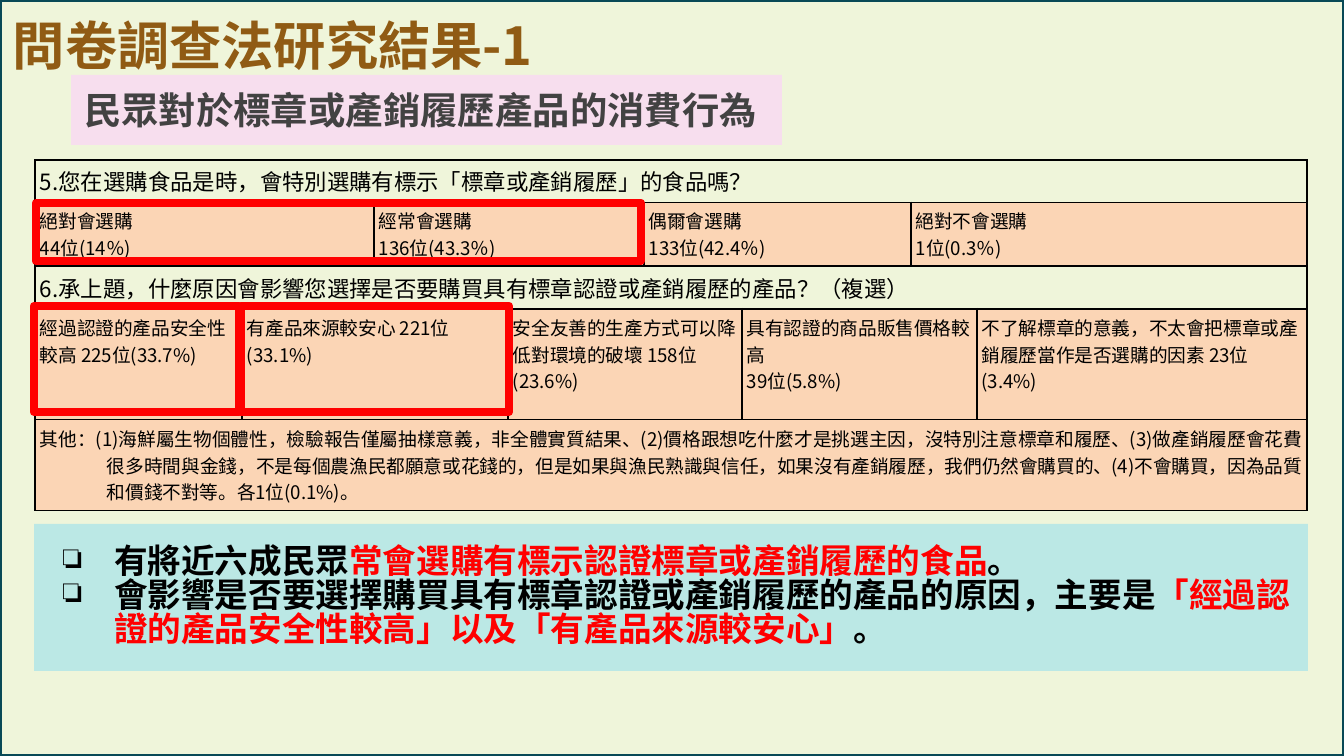
from lxml import etree
from pptx import Presentation
from pptx.dml.color import RGBColor
from pptx.enum.shapes import MSO_SHAPE
from pptx.enum.text import MSO_ANCHOR, MSO_AUTO_SIZE, PP_ALIGN
from pptx.oxml.ns import qn
from pptx.util import Pt

RECTANGLE = MSO_SHAPE.RECTANGLE
TOP, MIDDLE = MSO_ANCHOR.TOP, MSO_ANCHOR.MIDDLE
LEFT, JUSTIFY = PP_ALIGN.LEFT, PP_ALIGN.JUSTIFY
NO_AUTOFIT = MSO_AUTO_SIZE.NONE

EMU_PER_PX = 914400 / 134.4
SLIDE_W, SLIDE_H = 1344, 756
HEADING_FONT = "Noto Sans CJK SC"
TABLE_FONT = "Noto Sans CJK TC"
BLACK, RED, PEACH = "000000", "FF0000", "FBD5B5"

COLUMN_WIDTHS = [207, 66, 66, 134, 70, 66, 98, 103, 66, 66, 330]
ROW_HEIGHTS = [40, 63, 39, 111, 89]
# Each row: text size, fill, and the answers as (columns spanned, lines).
SURVEY_ROWS = [
    (12, None, [(11, ["5.您在選購食品是時，會特別選購有標示「標章或產銷履歷」的食品嗎？"])]),
    (10, PEACH, [
        (3, ["絕對會選購", "44位(14％)"]),
        (3, ["經常會選購", "136位(43.3％)"]),
        (3, ["偶爾會選購", "133位(42.4％)"]),
        (2, ["絕對不會選購", "1位(0.3％)"]),
    ]),
    (12, None, [(11, ["6.承上題，什麼原因會影響您選擇是否要購買具有標章認證或產銷履歷的產品？（複選）"])]),
    (10, PEACH, [
        (1, ["經過認證的產品安全性較高 225位(33.7%)"]),
        (3, ["有產品來源較安心 221位(33.1%)"]),
        (3, ["安全友善的生產方式可以降低對環境的破壞 158位(23.6%)"]),
        (3, ["具有認證的商品販售價格較高", "39位(5.8%)"]),
        (1, ["不了解標章的意義，不太會把標章或產銷履歷當作是否選購的因素 23位(3.4%)"]),
    ]),
    (10, PEACH, [(11, [
        "其他：(1)海鮮屬生物個體性，檢驗報告僅屬抽樣意義，非全體實質結果、"
        "(2)價格跟想吃什麼才是挑選主因，沒特別注意標章和履歷、"
        "(3)做產銷履歷會花費很多時間與金錢，不是每個農漁民都願意或花錢的，"
        "但是如果與漁民熟識與信任，如果沒有產銷履歷，我們仍然會購買的、"
        "(4)不會購買，因為品質和價錢不對等。各1位(0.1%)。"])]),
]
FINDINGS = [
    [("有將近六成民眾", BLACK), ("常會選購有標示認證標章或產銷履歷的食品", RED), ("。", BLACK)],
    [("會影響是否要選擇購買具有標章認證或產銷履歷的產品的原因，主要是", BLACK),
     ("「經過認證的產品安全性較高」以及「有產品來源較安心」", RED), ("。", BLACK)],
]
HIGHLIGHTS = [(36, 203, 605, 58), (34, 306, 205, 106), (241, 306, 268, 106)]


def px(length):
    return round(length * EMU_PER_PX)


def rgb(color):
    return RGBColor.from_string(color)


def style_paragraph(paragraph, font_name, size, color=None, bold=False, align=LEFT):
    paragraph.alignment = align
    font = paragraph.font
    font.size, font.bold, font.name = Pt(size), bold, font_name
    if color:
        font.color.rgb = rgb(color)
    defaults = paragraph._p.pPr.find(qn("a:defRPr"))
    etree.SubElement(defaults, qn("a:ea")).set("typeface", font_name)


def set_indent(paragraph, margin, first_line):
    properties = paragraph._p.get_or_add_pPr()
    properties.set("marL", str(px(margin)))
    properties.set("indent", str(px(first_line)))
    return properties


def add_bullet(paragraph, symbol):
    properties = set_indent(paragraph, 67, -51)
    color = etree.SubElement(properties, qn("a:buClr"))
    etree.SubElement(color, qn("a:srgbClr")).set("val", BLACK)
    etree.SubElement(properties, qn("a:buChar")).set("char", symbol)


def set_frame(frame, anchor, wrap=True):
    frame.word_wrap = wrap
    frame.auto_size = NO_AUTOFIT
    frame.vertical_anchor = anchor
    frame.margin_left = frame.margin_right = px(13)
    frame.margin_top = frame.margin_bottom = px(13)


def add_panel(slide, box, fill=None, line=None, line_width=1):
    panel = slide.shapes.add_shape(RECTANGLE, *map(px, box))
    panel.shadow.inherit = False
    if fill:
        panel.fill.solid()
        panel.fill.fore_color.rgb = rgb(fill)
    else:
        panel.fill.background()
    if line:
        panel.line.color.rgb = rgb(line)
        panel.line.width = Pt(line_width)
    else:
        panel.line.fill.background()
    return panel


def add_section_heading(slide, box):
    heading = slide.shapes.add_textbox(*map(px, box))
    set_frame(heading.text_frame, TOP, wrap=False)
    paragraph = heading.text_frame.paragraphs[0]
    paragraph.text = "問卷調查法研究結果-1"
    style_paragraph(paragraph, HEADING_FONT, 28, "905B14", bold=True)


def format_title(slide, box):
    title = slide.shapes.title
    title.left, title.top, title.width, title.height = map(px, box)
    title.fill.solid()
    title.fill.fore_color.rgb = rgb("F7DEEE")
    set_frame(title.text_frame, MIDDLE)
    paragraph = title.text_frame.paragraphs[0]
    paragraph.text = "民眾對於標章或產銷履歷產品的消費行為"
    style_paragraph(paragraph, HEADING_FONT, 20, "424242", bold=True)
    slide.shapes._spTree.append(title._element)  # bring to front


def format_cell(cell, fill):
    """Borders go in first: the schema wants them ahead of the fill."""
    cell.margin_left = cell.margin_right = px(5)
    cell.margin_top = cell.margin_bottom = px(5)
    properties = cell._tc.get_or_add_tcPr()
    for side in ("lnL", "lnR", "lnT", "lnB"):
        border = etree.SubElement(properties, qn(f"a:{side}"), w=str(Pt(1)))
        color = etree.SubElement(border, qn("a:solidFill"))
        etree.SubElement(color, qn("a:srgbClr")).set("val", BLACK)
    if fill:
        cell.fill.solid()
        cell.fill.fore_color.rgb = rgb(fill)
    else:
        cell.fill.background()


def add_survey_table(slide, left, top):
    table = slide.shapes.add_table(
        len(ROW_HEIGHTS), len(COLUMN_WIDTHS), px(left), px(top),
        px(sum(COLUMN_WIDTHS)), px(sum(ROW_HEIGHTS))).table
    table.first_row = table.horz_banding = False
    for column, width in zip(table.columns, COLUMN_WIDTHS):
        column.width = px(width)
    for row, height in zip(table.rows, ROW_HEIGHTS):
        row.height = px(height)
    for row_index, (size, fill, answers) in enumerate(SURVEY_ROWS):
        for cell in table.rows[row_index].cells:
            format_cell(cell, fill)
        start = 0
        for span, lines in answers:
            answer = table.cell(row_index, start)
            if span > 1:
                answer.merge(table.cell(row_index, start + span - 1))
            answer.text = "\n".join(lines)
            for paragraph in answer.text_frame.paragraphs:
                style_paragraph(paragraph, TABLE_FONT, size, BLACK)
            start += span
    remarks = table.cell(len(SURVEY_ROWS) - 1, 0).text_frame.paragraphs[0]
    remarks.alignment = JUSTIFY
    set_indent(remarks, 67, -67)


def add_findings(slide, box):
    frame = add_panel(slide, box, fill="BBE8E5").text_frame
    set_frame(frame, MIDDLE)
    for index, finding in enumerate(FINDINGS):
        paragraph = frame.add_paragraph() if index else frame.paragraphs[0]
        add_bullet(paragraph, "❏")
        style_paragraph(paragraph, HEADING_FONT, 18, bold=True)
        paragraph.line_spacing = 0.84
        for words, color in finding:
            run = paragraph.add_run()
            run.text = words
            run.font.color.rgb = rgb(color)


def build_results_slide(presentation):
    slide = presentation.slides.add_slide(presentation.slide_layouts[5])
    add_panel(slide, (0, 0, SLIDE_W, SLIDE_H), "EFF5DA", "084956", 2)
    add_survey_table(slide, 35, 160)
    add_findings(slide, (34, 524, 1274, 147))
    add_section_heading(slide, (0, 0, 559, 87))
    for box in HIGHLIGHTS:
        add_panel(slide, box, line=RED, line_width=4.5)
    format_title(slide, (71, 75, 711, 70))


def main():
    presentation = Presentation()
    presentation.slide_width, presentation.slide_height = px(SLIDE_W), px(SLIDE_H)
    build_results_slide(presentation)
    presentation.save("out.pptx")


if __name__ == "__main__":
    main()
